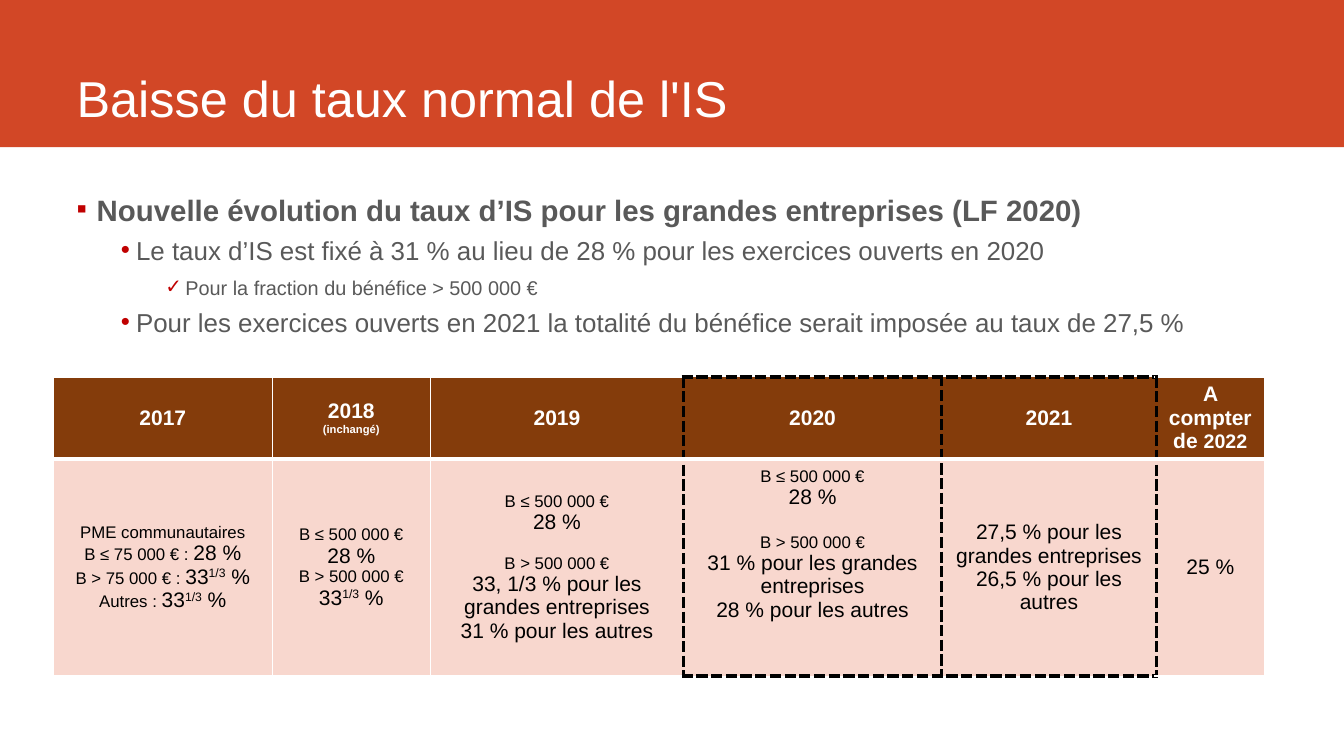
from lxml import etree
from pptx import Presentation
from pptx.dml.color import RGBColor
from pptx.enum import shapes, text
from pptx.oxml import ns
from pptx.util import Inches, Pt

FONT = "Arial"
TITLE = "Baisse du taux normal de l'IS"
POINTS = [
    ("Nouvelle évolution du taux d’IS pour les grandes entreprises (LF 2020)", 0),
    ("Le taux d’IS est fixé à 31 % au lieu de 28 % pour les exercices ouverts en 2020", 1),
    ("Pour la fraction du bénéfice > 500 000 €", 2),
    ("Pour les exercices ouverts en 2021 la totalité du bénéfice serait imposée au taux de 27,5 %", 1),
]
LEVELS = [("▪", 21, 0.3, 0.2), ("•", 18.5, 0.69, 0.15), ("✓", 14.2, 1.18, 0.2)]

THIRD = [("33", 15), ("1/3", 15), (" %", 15)]
LOW = [("B ≤ 500 000 €", 12)]
HIGH = [("B > 500 000 €", 12)]
RATE = [("28 %", 15)]
HEADS = [
    [[("2017", 15)]],
    [[("2018", 15)], [("(inchangé)", 8)]],
    [[("2019", 15)]],
    [[("2020", 15)]],
    [[("2021", 15)]],
    [[("A compter de ", 15), ("2022", 14)]],
]
RATES = [
    [[("PME communautaires", 12)],
     [("B ≤ 75 000 € : ", 12), ("28 %", 15)],
     [("B > 75 000 € : ", 12)] + THIRD,
     [("Autres : ", 12)] + THIRD],
    [LOW, RATE, HIGH, THIRD],
    [LOW, RATE, HIGH,
     [("33, 1/3 % pour les grandes entreprises", 15)],
     [("31 % pour les autres", 15)]],
    [LOW, RATE, HIGH,
     [("31 % pour les grandes entreprises", 15)],
     [("28 % pour les autres", 15)]],
    [[("27,5 % pour les grandes entreprises", 15)],
     [("26,5 % pour les autres", 15)]],
    [[("25 %", 15)]],
]
GAPS = {2: 14, 3: 17}
WIDTHS = [2.17, 1.57, 2.51, 2.56, 2.13, 1.07]
HEIGHTS = [0.75, 2.05]
ROWS = [(HEADS, "843C0B", "FFFFFF"), (RATES, "F8D7CE", "000000")]
THIN, HALF, THICK = ("FFFFFF", 1, "solid"), ("FFFFFF", 0.5, "solid"), ("FFFFFF", 3, "solid")
DASH, INNER = ("000000", 3, "lgDash"), ("000000", 2.25, "lgDash")
SIDES = [THIN, THIN, HALF, DASH, INNER, DASH, THIN]
FRAMED = (3, 4)


def rgb(code):
    return RGBColor.from_string(code)


def style(font, size, color, bold=False):
    font.name, font.size, font.bold = FONT, Pt(size), bold
    font.color.rgb = rgb(color)


def add(parent, tag, **attrs):
    node = etree.SubElement(parent, ns.qn(tag))
    for key, value in attrs.items():
        node.set(key, str(value))
    return node


def bullet(para, mark, left, hang):
    props = para._p.get_or_add_pPr()
    props.set("marL", str(Inches(left)))
    props.set("indent", str(-Inches(hang)))
    add(add(props, "a:buClr"), "a:srgbClr", val="C00000")
    add(props, "a:buFont", typeface=FONT)
    add(props, "a:buChar", char=mark)


def border(cell, edges):
    props = cell._tc.get_or_add_tcPr()
    for side, (color, width, dash) in zip("LRTB", edges):
        line = add(props, "a:ln" + side, w=Pt(width))
        add(add(line, "a:solidFill"), "a:srgbClr", val=color)
        add(line, "a:prstDash", val=dash)


def write(cell, lines, color, bold, gap):
    frame = cell.text_frame
    for i, runs in enumerate(lines):
        para = frame.paragraphs[0] if i == 0 else frame.add_paragraph()
        para.alignment = text.PP_ALIGN.CENTER
        if gap and runs is HIGH:
            para.space_before = Pt(gap)
        for words, size in runs:
            run = para.add_run()
            run.text = words
            style(run.font, size, color, bold)
            if words == "1/3":
                run._r.get_or_add_rPr().set("baseline", "30000")


def head(slide):
    band = slide.shapes.add_shape(shapes.MSO_SHAPE.RECTANGLE, 0, 0, Inches(13.33), Inches(1.46))
    band.shadow.inherit = False
    band.fill.solid()
    band.fill.fore_color.rgb = rgb("D24726")
    band.line.fill.background()
    slide.shapes._spTree.insert(2, band._element)
    title = slide.shapes.title
    title.left, title.top = Inches(0.66), Inches(0)
    title.width, title.height = Inches(11.76), Inches(1.32)
    frame = title.text_frame
    frame.text = TITLE
    frame.auto_size = text.MSO_AUTO_SIZE.NONE
    frame.vertical_anchor = text.MSO_ANCHOR.BOTTOM
    frame.paragraphs[0].alignment = text.PP_ALIGN.LEFT
    style(frame.paragraphs[0].font, 36, "FFFFFF")


def body(slide):
    box = slide.shapes.add_textbox(Inches(0.66), Inches(2), Inches(11.76), Inches(1.5))
    frame = box.text_frame
    frame.word_wrap = True
    frame.margin_left = frame.margin_right = frame.margin_top = frame.margin_bottom = 0
    for i, (words, level) in enumerate(POINTS):
        mark, size, left, hang = LEVELS[level]
        para = frame.paragraphs[0] if i == 0 else frame.add_paragraph()
        para.text, para.level = words, level
        para.line_spacing = 0.7
        para.space_after = Pt(6)
        if i:
            para.space_before = Pt(6)
        bullet(para, mark, left, hang)
        style(para.font, size, "595959", level == 0)


def grid(slide):
    table = slide.shapes.add_table(len(ROWS), len(WIDTHS), Inches(0.53), Inches(3.74),
                                   Inches(sum(WIDTHS)), Inches(sum(HEIGHTS))).table
    table.horz_banding = False
    for col, width in zip(table.columns, WIDTHS):
        col.width = Inches(width)
    for r, (cells, fill, color) in enumerate(ROWS):
        table.rows[r].height = Inches(HEIGHTS[r])
        for c, lines in enumerate(cells):
            cell = table.cell(r, c)
            edge = DASH if c in FRAMED else THIN
            levels = [edge, THICK, edge]
            border(cell, [SIDES[c], SIDES[c + 1], levels[r], levels[r + 1]])
            cell.fill.solid()
            cell.fill.fore_color.rgb = rgb(fill)
            cell.vertical_anchor = text.MSO_ANCHOR.MIDDLE
            cell.margin_left = cell.margin_right = Inches(0.06)
            cell.margin_top = cell.margin_bottom = Inches(0.03)
            write(cell, lines, color, r == 0, GAPS.get(c))
    table.cell(1, 3).margin_bottom = Inches(0.49)


def main():
    deck = Presentation()
    deck.slide_width, deck.slide_height = Inches(13.33), Inches(7.5)
    slide = deck.slides.add_slide(deck.slide_layouts[5])
    head(slide)
    body(slide)
    grid(slide)
    deck.save("out.pptx")


if __name__ == "__main__":
    main()
